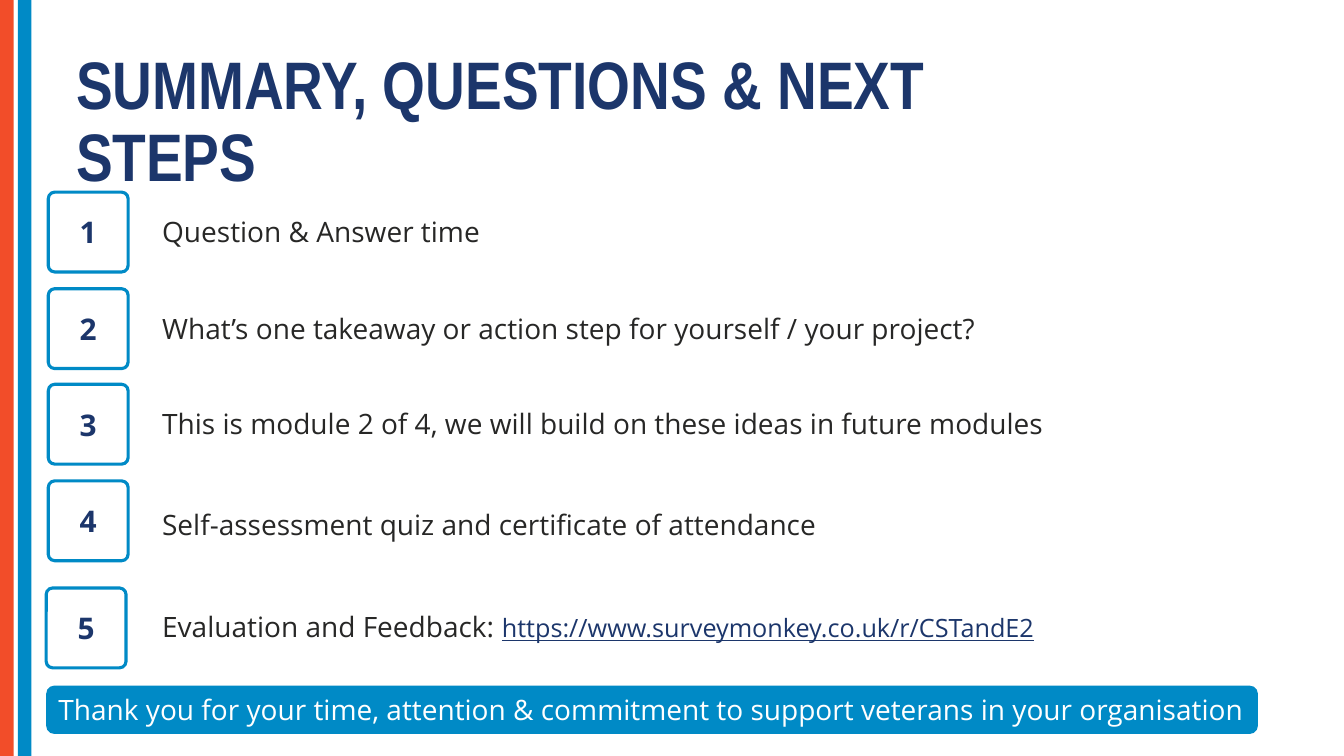
import pptx
import pptx.util
import pptx.dml.color
import pptx.enum.shapes
import pptx.enum.text

RGBColor = pptx.dml.color.RGBColor
ORANGE = RGBColor(0xF2, 0x4D, 0x29)
BLUE = RGBColor(0x00, 0x8A, 0xC6)
NAVY = RGBColor(0x1C, 0x36, 0x6B)
INK = RGBColor(0x27, 0x27, 0x26)
WHITE = RGBColor(0xFF, 0xFF, 0xFF)

HEADING_FONT = "Arial Narrow"
BODY_FONT = "Open Sans"
EMU_PER_PX = 9525
SLIDE_W, SLIDE_H = 1280, 720
BADGE_SIZE = 76
STEP_TEXT_LEFT = 145

# Badge left, badge top, text top, wording
STEPS = [
    (46, 183, 200, "Question & Answer time"),
    (46, 275, 292, "What’s one takeaway or action step for yourself / your project?"),
    (46, 366, 382, "This is module 2 of 4, we will build on these ideas in future modules"),
    (46, 458, 479, "Self-assessment quiz and certificate of attendance"),
    (44, 560, 576, "Evaluation and Feedback: "),
]
SURVEY_ADDRESS = "https://www.surveymonkey.co.uk/r/CSTandE2"


def px(*lengths):
    return [pptx.util.Emu(length * EMU_PER_PX) for length in lengths]


def add_run(paragraph, text, size, color, font=BODY_FONT, bold=False, underline=False):
    run = paragraph.add_run()
    run.text = text
    run.font.name = font
    run.font.size = pptx.util.Pt(size)
    run.font.color.rgb = color
    run.font.bold = bold
    run.font.underline = underline


def add_panel(slide, kind, box, fill, outline=None):
    """Add a flat filled shape, with an outline only when a colour is given."""
    panel = slide.shapes.add_shape(kind, *px(*box))
    panel.shadow.inherit = False
    panel.fill.solid()
    panel.fill.fore_color.rgb = fill
    if outline is None:
        panel.line.fill.background()
    else:
        panel.line.color.rgb = outline
        panel.line.width = pptx.util.Pt(2.25)
    return panel


def add_text_line(slide, box):
    """Add a wrapping text box and return its paragraph."""
    frame = slide.shapes.add_textbox(*px(*box)).text_frame
    frame.word_wrap = True
    return frame.paragraphs[0]


def add_side_bar(slide, left, color):
    add_panel(slide, pptx.enum.shapes.MSO_SHAPE.RECTANGLE, (left, 0, 13, SLIDE_H), color)


def add_title(slide, text):
    title = add_text_line(slide, (63, 44, 1000, 50))
    title.line_spacing = 0.9
    add_run(title, text, 48, NAVY, HEADING_FONT, bold=True)


def add_badge(slide, left, top, number):
    badge = add_panel(slide, pptx.enum.shapes.MSO_SHAPE.ROUNDED_RECTANGLE,
                      (left, top, BADGE_SIZE, BADGE_SIZE), WHITE, BLUE)
    badge.adjustments[0] = 0.08
    badge.text_frame.vertical_anchor = pptx.enum.text.MSO_ANCHOR.MIDDLE
    label = badge.text_frame.paragraphs[0]
    label.alignment = pptx.enum.text.PP_ALIGN.CENTER
    add_run(label, str(number), 21.3, NAVY, bold=True)


def add_step(slide, number, badge_left, badge_top, text_top, wording):
    """Add a numbered badge with its wording and return the wording's paragraph."""
    add_badge(slide, badge_left, badge_top, number)
    step = add_text_line(slide, (STEP_TEXT_LEFT, text_top, 1060, 42))
    add_run(step, wording, 20, INK)
    return step


def add_thanks(slide, text):
    banner = add_panel(slide, pptx.enum.shapes.MSO_SHAPE.ROUNDED_RECTANGLE,
                       (44, 653, 1154, 46), BLUE)
    frame = banner.text_frame
    frame.word_wrap = True
    frame.margin_right = 0
    frame.vertical_anchor = pptx.enum.text.MSO_ANCHOR.MIDDLE
    thanks = frame.paragraphs[0]
    thanks.alignment = pptx.enum.text.PP_ALIGN.LEFT
    add_run(thanks, text, 20, WHITE)


def main():
    deck = pptx.Presentation()
    deck.slide_width, deck.slide_height = px(SLIDE_W, SLIDE_H)
    slide = deck.slides.add_slide(deck.slide_layouts[6])

    add_side_bar(slide, 0, ORANGE)
    add_side_bar(slide, 17, BLUE)
    add_title(slide, "SUMMARY, QUESTIONS & NEXT STEPS")
    for number, step in enumerate(STEPS, start=1):
        last_step = add_step(slide, number, *step)
    add_run(last_step, SURVEY_ADDRESS, 18, NAVY, underline=True)
    add_thanks(slide, "Thank you for your time, attention & commitment "
                      "to support veterans in your organisation")

    deck.save("out.pptx")


if __name__ == "__main__":
    main()
